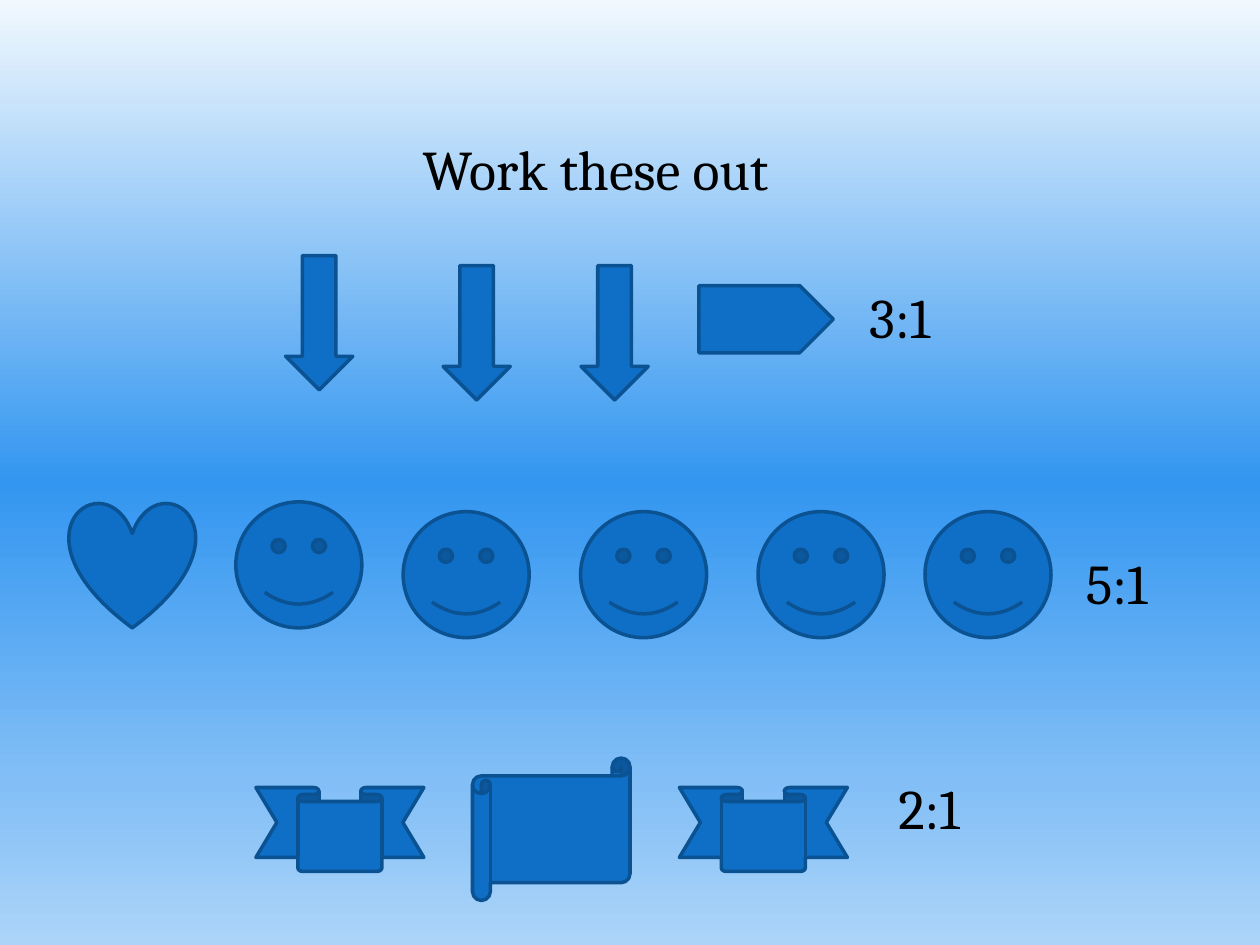
from dataclasses import dataclass

from lxml import etree
from pptx import Presentation
from pptx.dml.color import RGBColor
from pptx.enum.shapes import MSO_SHAPE
from pptx.enum.text import MSO_ANCHOR, MSO_AUTO_SIZE, PP_ALIGN
from pptx.oxml.ns import qn
from pptx.slide import Slide
from pptx.text.text import TextFrame
from pptx.util import Pt

ARROW = MSO_SHAPE.DOWN_ARROW
PLATE = MSO_SHAPE.PENTAGON
HEART = MSO_SHAPE.HEART
FACE = MSO_SHAPE.SMILEY_FACE
RIBBON = MSO_SHAPE.DOWN_RIBBON
SCROLL = MSO_SHAPE.HORIZONTAL_SCROLL
TOP = MSO_ANCHOR.TOP
GROW = MSO_AUTO_SIZE.SHAPE_TO_FIT_TEXT
LEFT, CENTER = PP_ALIGN.LEFT, PP_ALIGN.CENTER
TITLE_ONLY = 5


@dataclass(frozen=True)
class Theme:
    font: str = "Cambria"
    size: float = 32
    ink: str = "000000"
    fill: str = "0F6FC6"
    edge: str = "0B5292"
    weight: float = 2
    sky: tuple = ((0, "F1F8FE"), (51, "3396F0"), (83, "83BFF6"), (100, "ACD4F9"))


@dataclass(frozen=True)
class Icon:
    kind: MSO_SHAPE
    wide: float
    high: float
    spots: tuple


@dataclass(frozen=True)
class Ratio:
    text: str
    left: float
    top: float
    wide: float


THEME = Theme()
TEXT_HIGH = 46

ICONS = (
    Icon(ARROW, 38.4, 76.8, ((163.2, 146), (253.2, 151.8), (332, 151.8))),
    Icon(PLATE, 76.8, 38.4, ((399.4, 163.2),)),
    Icon(HEART, 72, 72, ((39.6, 286.8),)),
    Icon(FACE, 72, 72, ((134.8, 286.8), (230.4, 292.4), (331.8, 292.4),
                        (433.2, 292.4), (528.6, 292.4))),
    Icon(RIBBON, 96, 48, ((146.2, 450), (388.2, 450))),
    Icon(SCROLL, 90, 81.4, ((270, 433.2),)),
)

RATIOS = (
    Ratio("3:1", 489.6, 157.6, 90),
    Ratio("5:1", 613.4, 309.6, 106.6),
    Ratio("2:1", 506.2, 438.6, 112.4),
)


def paint_sky(slide: Slide) -> None:
    fill = slide.background.fill
    fill.gradient()
    fill.gradient_angle = 270
    stops = next(slide.element.iter(qn("a:gsLst")))
    for old in list(stops):
        stops.remove(old)
    for place, color in THEME.sky:
        stop = etree.SubElement(stops, qn("a:gs"), pos=str(place * 1000))
        etree.SubElement(stop, qn("a:srgbClr"), val=color)


def write(frame: TextFrame, text: str, align: PP_ALIGN) -> None:
    frame.text = text
    frame.word_wrap = True
    frame.auto_size = GROW
    frame.vertical_anchor = TOP
    line = frame.paragraphs[0]
    line.alignment = align
    line.font.name = THEME.font
    line.font.size = Pt(THEME.size)
    line.font.color.rgb = RGBColor.from_string(THEME.ink)


def add_title(slide: Slide, text: str) -> None:
    title = slide.shapes.title
    title.left, title.top = Pt(191.4), Pt(73.4)
    title.width, title.height = Pt(298), Pt(TEXT_HIGH)
    write(title.text_frame, text, CENTER)


def add_icon(slide: Slide, icon: Icon) -> None:
    for left, top in icon.spots:
        shape = slide.shapes.add_shape(
            icon.kind, Pt(left), Pt(top), Pt(icon.wide), Pt(icon.high))
        shape.shadow.inherit = False
        shape.fill.solid()
        shape.fill.fore_color.rgb = RGBColor.from_string(THEME.fill)
        shape.line.color.rgb = RGBColor.from_string(THEME.edge)
        shape.line.width = Pt(THEME.weight)


def add_ratio(slide: Slide, ratio: Ratio) -> None:
    box = slide.shapes.add_textbox(
        Pt(ratio.left), Pt(ratio.top), Pt(ratio.wide), Pt(TEXT_HIGH))
    write(box.text_frame, ratio.text, LEFT)


def main() -> None:
    deck = Presentation()
    deck.slide_width, deck.slide_height = Pt(720), Pt(540)
    slide = deck.slides.add_slide(deck.slide_layouts[TITLE_ONLY])
    paint_sky(slide)
    add_title(slide, "Work these out")
    for icon in ICONS:
        add_icon(slide, icon)
    for ratio in RATIOS:
        add_ratio(slide, ratio)
    deck.save("out.pptx")


if __name__ == "__main__":
    main()
